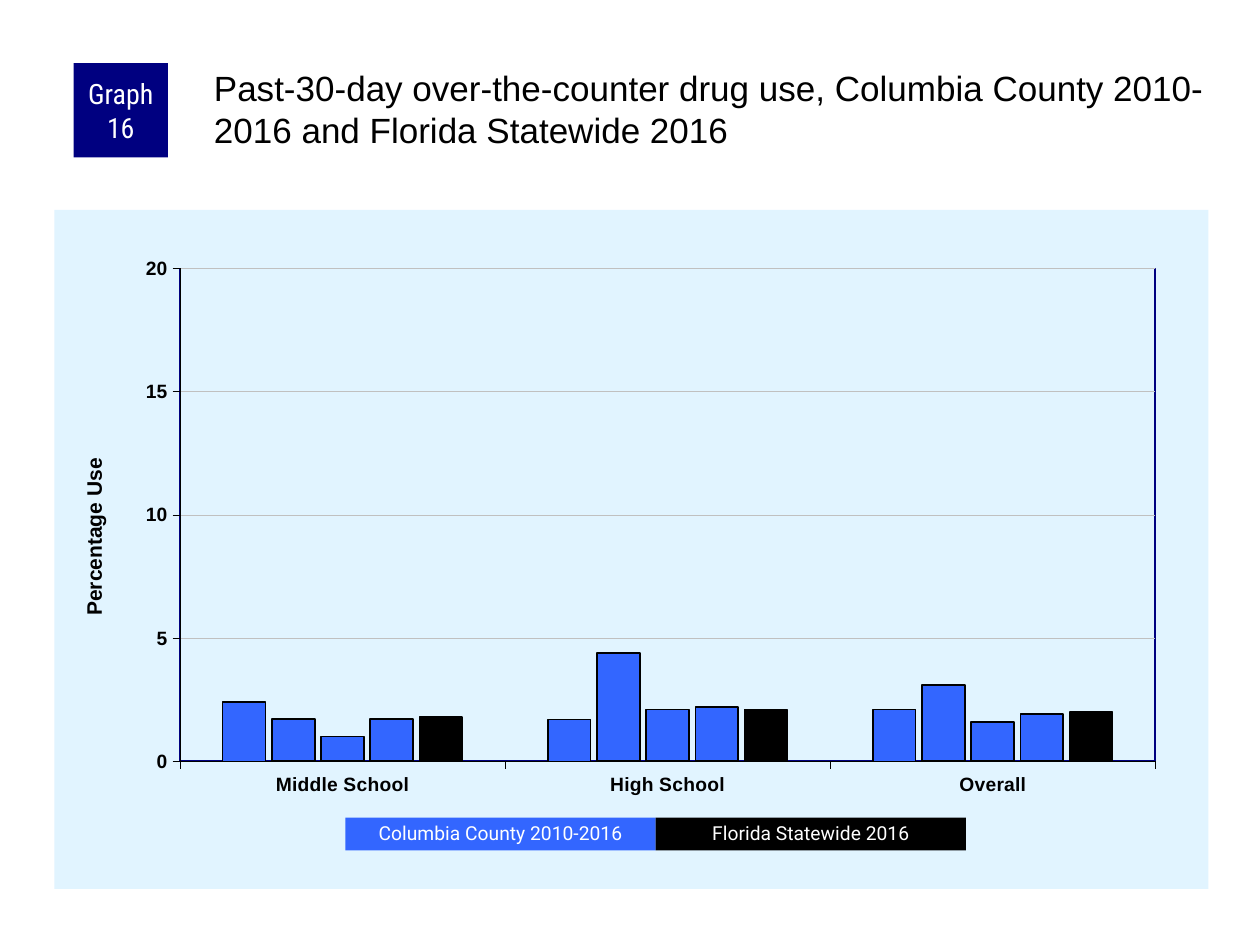
import dataclasses

import lxml.etree
import pptx
import pptx.chart.data
import pptx.dml.color
import pptx.enum.chart
import pptx.enum.text
import pptx.enum.shapes
import pptx.oxml
import pptx.oxml.ns
import pptx.util

Pt = pptx.util.Pt
qn = pptx.oxml.ns.qn
ANCHOR = pptx.enum.text.MSO_ANCHOR
ALIGN = pptx.enum.text.PP_ALIGN


@dataclasses.dataclass(frozen=True)
class Theme:
    black: str = "000000"
    white: str = "FFFFFF"
    navy: str = "000080"
    blue: str = "3366FF"
    panel: str = "E1F4FF"
    grid: str = "C0C0C0"
    body_font: str = "Arial"
    key_font: str = "Roboto"
    badge_font: str = "Roboto Condensed"
    title_size: float = 20
    badge_size: float = 16
    axis_title_size: float = 12
    label_size: float = 11
    chart_size: float = 8


def color(value):
    return pptx.dml.color.RGBColor.from_string(value)


def format_font(font, name, size, fill, bold=False):
    font.name = name
    font.size = Pt(size)
    font.bold = bold
    font.color.rgb = color(fill)


def write_text(frame, text, *, name, size, fill, align=ALIGN.LEFT,
               anchor=ANCHOR.MIDDLE, margins=(7.2, 3.6, 7.2, 3.6), spacing=1):
    frame.word_wrap = True
    frame.auto_size = pptx.enum.text.MSO_AUTO_SIZE.NONE
    frame.vertical_anchor = anchor
    (frame.margin_left, frame.margin_top,
     frame.margin_right, frame.margin_bottom) = map(Pt, margins)
    paragraph = frame.paragraphs[0]
    paragraph.alignment = align
    paragraph.line_spacing = spacing
    run = paragraph.add_run()
    run.text = text
    format_font(run.font, name, size, fill)


def format_line(line, fill, width):
    line.color.rgb = color(fill)
    line.width = Pt(width)


def parse_chart_xml(markup):
    namespaces = pptx.oxml.ns.nsdecls("c", "a")
    return pptx.oxml.parse_xml(markup.replace(">", f" {namespaces}>", 1))


def place(element, index, **layout):
    for previous in element.findall(qn("c:layout")):
        element.remove(previous)
    target = '<c:layoutTarget val="inner"/>' if "w" in layout else ""
    modes = "".join(f'<c:{key}Mode val="edge"/>' for key in ("x", "y"))
    values = "".join(f'<c:{key} val="{value}"/>' for key, value in layout.items())
    element.insert(index, parse_chart_xml(
        f"<c:layout><c:manualLayout>{target}{modes}{values}</c:manualLayout></c:layout>"))


class SlideBuilder:
    def __init__(self, presentation, theme):
        self.theme = theme
        self.slide = presentation.slides.add_slide(presentation.slide_layouts[5])

    def title(self, text, left, top, width, height):
        shape = self.slide.shapes.title
        shape.left, shape.top, shape.width, shape.height = map(
            Pt, (left, top, width, height))
        write_text(shape.text_frame, text, name=self.theme.body_font,
                   size=self.theme.title_size, fill=self.theme.black,
                   anchor=ANCHOR.TOP, margins=(2.25, 2.25, 0, 0))

    def box(self, text, left, top, width, height, fill, **text_format):
        shape = self.slide.shapes.add_shape(
            pptx.enum.shapes.MSO_SHAPE.RECTANGLE, *map(Pt, (left, top, width, height)))
        shape.shadow.inherit = False
        shape.fill.solid()
        shape.fill.fore_color.rgb = color(fill)
        shape.line.fill.background()
        write_text(shape.text_frame, text, fill=self.theme.white,
                   align=ALIGN.CENTER, **text_format)

    def column_chart(self, categories, series, axis_title, left, top, width, height):
        theme = self.theme
        data = pptx.chart.data.CategoryChartData()
        data.categories = categories
        for name, values, _, _ in series:
            data.add_series(name, values)
        chart = self.slide.shapes.add_chart(
            pptx.enum.chart.XL_CHART_TYPE.COLUMN_CLUSTERED,
            *map(Pt, (left, top, width, height)), data).chart
        chart.has_legend = False
        chart.has_title = False
        format_font(chart.font, theme.body_font, theme.chart_size, theme.black)

        plot = chart.plots[0]
        plot.gap_width = 200
        plot.overlap = -15
        plot.vary_by_categories = False
        for column, (_, _, fill, outline) in zip(plot.series, series):
            column.format.fill.solid()
            column.format.fill.fore_color.rgb = color(fill)
            format_line(column.format.line, theme.black, outline)

        for axis in (chart.category_axis, chart.value_axis):
            format_font(axis.tick_labels.font, theme.body_font,
                        theme.label_size, theme.black, bold=True)
            format_line(axis.format.line, theme.black, 0.25)
            axis.major_tick_mark = pptx.enum.chart.XL_TICK_MARK.OUTSIDE

        value_axis = chart.value_axis
        value_axis.minimum_scale = 0
        value_axis.maximum_scale = 20
        value_axis.major_unit = 5
        value_axis.tick_labels.number_format = "0"
        value_axis.tick_labels.number_format_is_linked = False
        format_line(value_axis.major_gridlines.format.line, theme.grid, 0.25)
        run = value_axis.axis_title.text_frame.paragraphs[0].add_run()
        run.text = axis_title
        format_font(run.font, theme.body_font, theme.axis_title_size,
                    theme.black, bold=True)

        root = chart.element
        title = root.find(f".//{qn('c:valAx')}/{qn('c:title')}")
        body = title.find(f".//{qn('a:bodyPr')}")
        body.set("rot", "-5400000")
        body.set("vert", "horz")
        place(title, 1, x=0.02, y=0.36)
        plot_area = root.find(f".//{qn('c:plotArea')}")
        place(plot_area, 0, x=0.109, y=0.086, w=0.845, h=0.726)
        plot_area.append(parse_chart_xml(
            f'<c:spPr><a:noFill/><a:ln w="{Pt(1)}"><a:solidFill>'
            f'<a:srgbClr val="{theme.navy}"/></a:solidFill></a:ln></c:spPr>'))
        root.find(qn("c:chart")).addnext(parse_chart_xml(
            f'<c:spPr><a:solidFill><a:srgbClr val="{theme.panel}"/></a:solidFill>'
            '<a:ln><a:noFill/></a:ln></c:spPr>'))


def main():
    theme = Theme()
    presentation = pptx.Presentation()
    presentation.slide_width = Pt(720)
    presentation.slide_height = Pt(540)
    builder = SlideBuilder(presentation, theme)

    builder.column_chart(
        ["Middle School", "High School", "Overall"],
        [("Series 1", (2.4, 1.7, 2.1), theme.blue, 0.75),
         ("Series 2", (1.7, 4.4, 3.1), theme.blue, 1),
         ("Series 3", (1, 2.1, 1.6), theme.blue, 1),
         ("Series 4", (1.7, 2.2, 1.9), theme.blue, 1),
         ("Series 5", (1.8, 2.1, 2), theme.black, 1)],
        "Percentage Use", 31, 120, 659.5, 388)
    builder.box("Graph 16", 42, 36, 54, 54, theme.navy, name=theme.badge_font,
                size=theme.badge_size, margins=(3.6, 0, 3.6, 0))
    builder.title("Past-30-day over-the-counter drug use, Columbia County 2010-2016 "
                  "and Florida Statewide 2016", 120, 36, 570, 60)
    key_width = 177.3
    keys = [("Columbia County 2010-2016", theme.blue),
            ("Florida Statewide 2016", theme.black)]
    for index, (label, fill) in enumerate(keys):
        builder.box(label, 197.4 + index * key_width, 467.3, key_width, 18.7, fill,
                    name=theme.key_font, size=theme.label_size, spacing=0.9)

    presentation.save("out.pptx")


if __name__ == "__main__":
    main()
